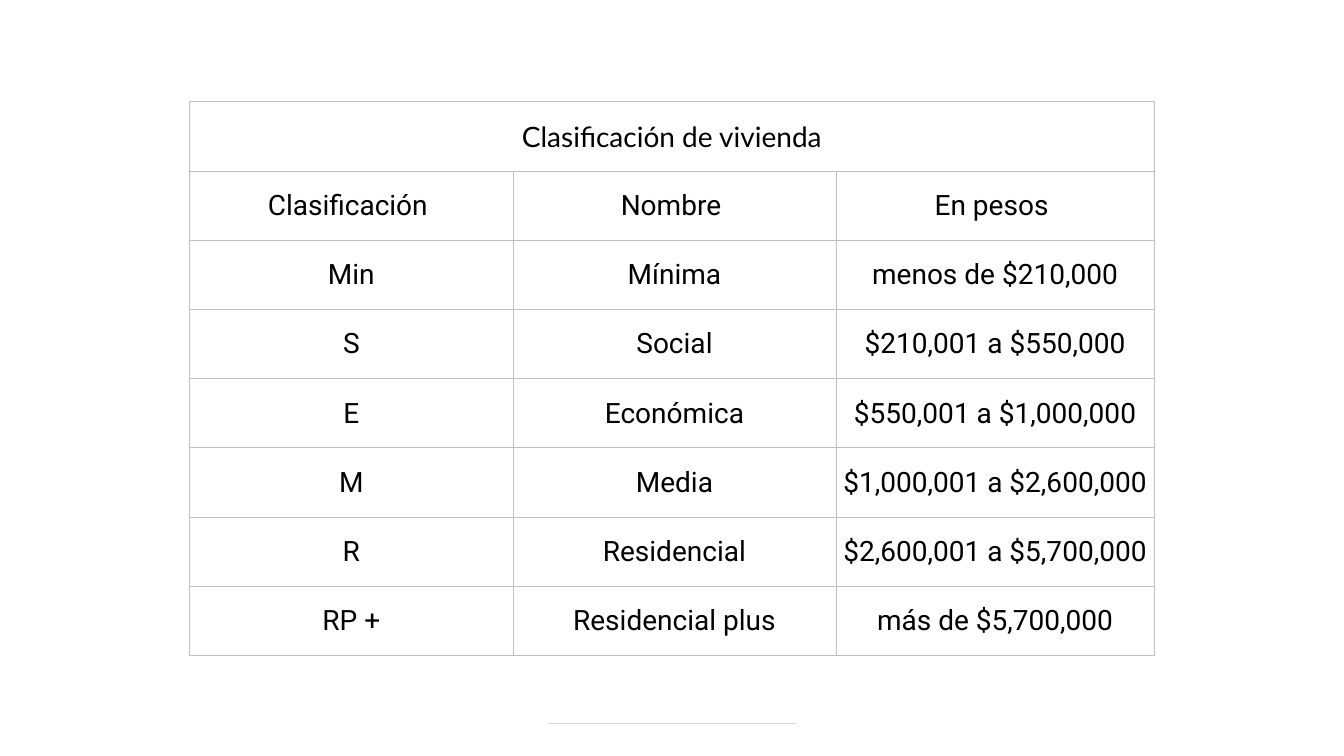
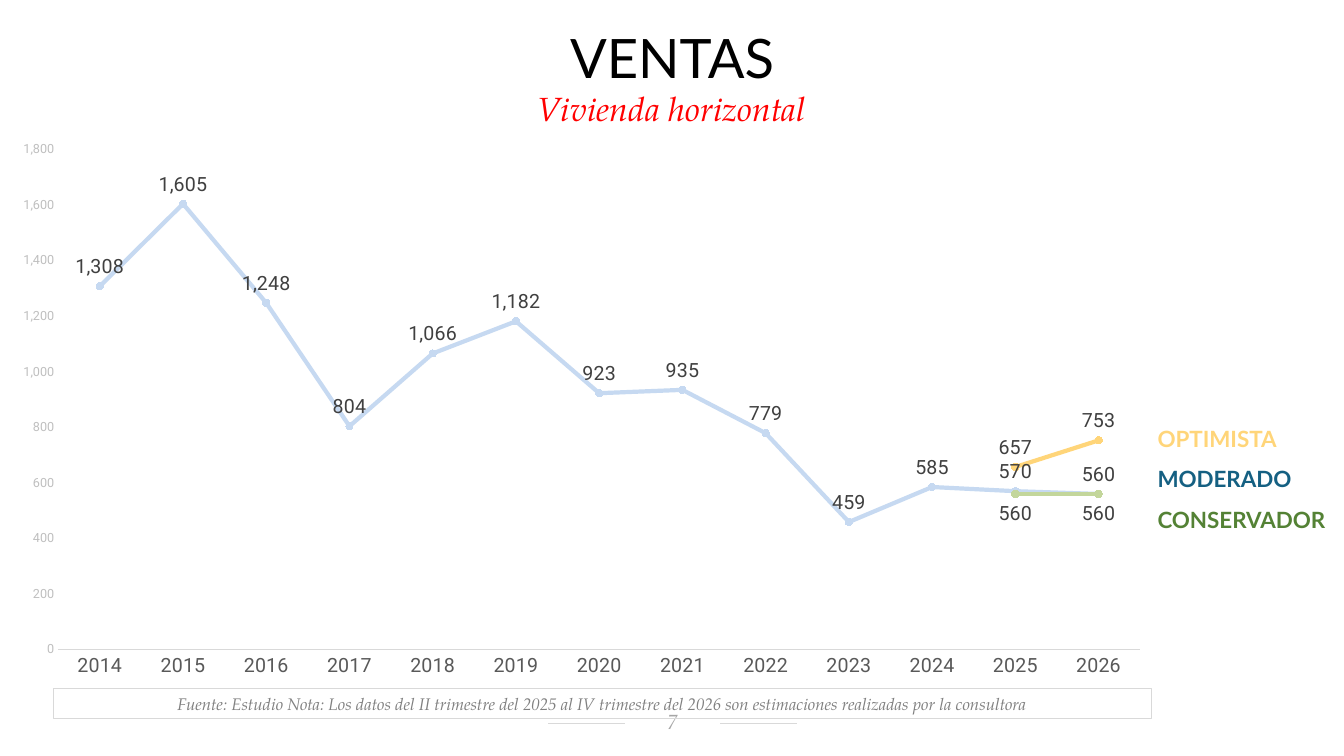
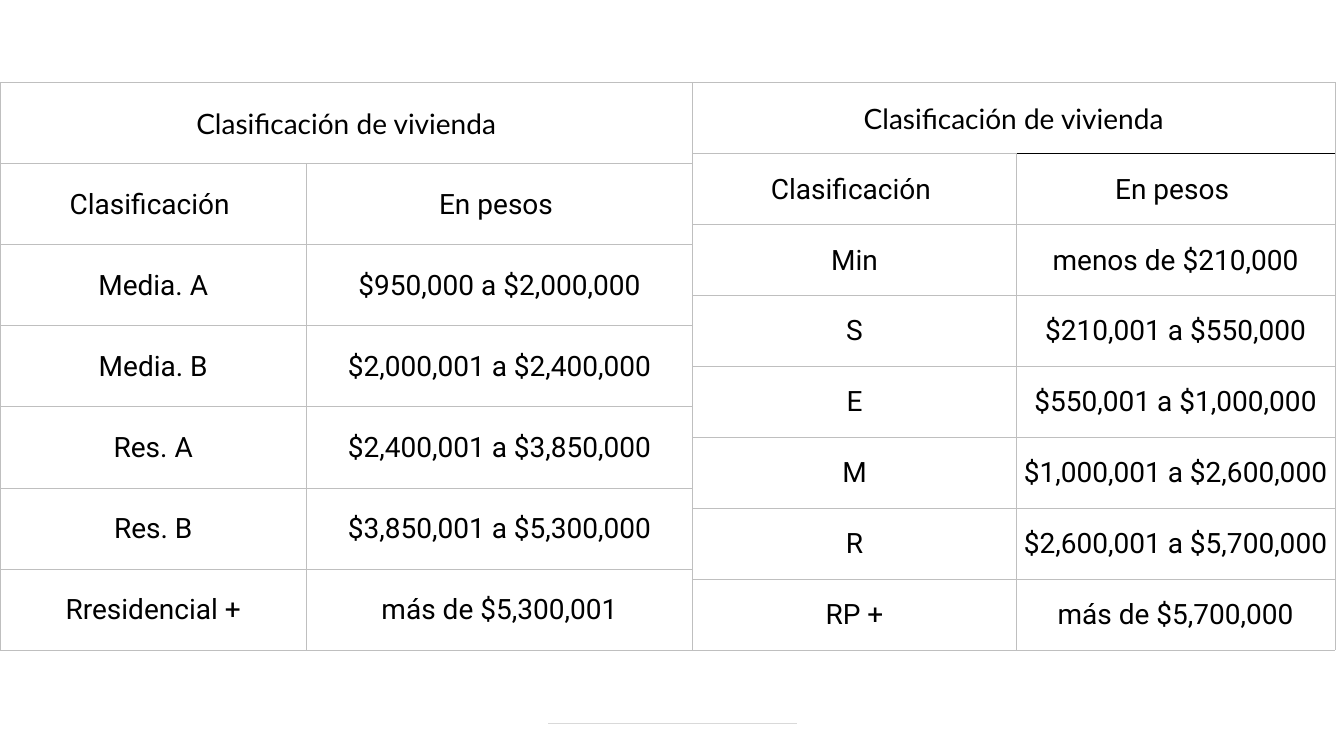
from lxml import etree
from pptx import Presentation
from pptx.chart.data import CategoryChartData
from pptx.dml.color import RGBColor
from pptx.enum.chart import (
    XL_CHART_TYPE as ChartType,
    XL_LABEL_POSITION as LabelPosition,
    XL_MARKER_STYLE as MarkerStyle,
    XL_TICK_MARK as TickMark,
)
from pptx.enum.shapes import MSO_CONNECTOR as Connector, MSO_SHAPE as Shape
from pptx.enum.text import MSO_ANCHOR as Anchor, PP_ALIGN as Align
from pptx.oxml.ns import qn
from pptx.util import Inches, Pt

COLORS = {
    "white": "FFFFFF",
    "black": "000000",
    "rule": "D9D9D9",
    "border": "BFBFBF",
    "page_number": "A6A6A6",
    "source": "808080",
    "subtitle": "FF0000",
    "category": "595959",
    "value": "404040",
    "history": "C6D9F1",
    "optimistic": "FFD579",
    "moderate": "156082",
    "conservative": "548235",
    "conservative_line": "C3D69B",
}
HEADING, BODY, ACCENT = "Lato", "Roboto", "TeX Gyre Pagella"
TABLE_TITLE = "Clasificación de vivienda"
HOUSING = [
    ("Clasificación ", "Nombre ", "En pesos "),
    ("Min", "Mínima", "menos de $210,000"),
    ("S", "Social", "$210,001 a $550,000"),
    ("E", "Económica", "$550,001 a $1,000,000"),
    ("M", "Media", "$1,000,001 a $2,600,000"),
    ("R", "Residencial", "$2,600,001 a $5,700,000"),
    ("RP +", "Residencial plus", "más de $5,700,000"),
]
VERTICAL = [
    ("Clasificación ", "En pesos "),
    ("Media. A", "$950,000 a $2,000,000"),
    ("Media. B", "$2,000,001 a $2,400,000"),
    ("Res. A", "$2,400,001 a $3,850,000"),
    ("Res. B", "$3,850,001 a $5,300,000"),
    ("Rresidencial +", "más de $5,300,001"),
]
YEARS = range(2014, 2027)
HISTORY = [1308, 1605, 1248, 804, 1066, 1182, 923, 935, 779, 459, 585, 570, 560]
SERIES = [
    ("Moderado", HISTORY, "history", LabelPosition.ABOVE),
    ("Optimista", [None] * 11 + [657, 753], "optimistic", LabelPosition.ABOVE),
    ("Conservador", [None] * 11 + [560, 560], "conservative_line", LabelPosition.BELOW),
]
SCENARIOS = [
    ("OPTIMISTA", "optimistic"),
    ("MODERADO", "moderate"),
    ("CONSERVADOR", "conservative"),
]


def rgb(color):
    return RGBColor.from_string(COLORS[color])


class Deck:
    def __init__(self):
        self.deck = Presentation()
        self.deck.slide_width = Inches(13.33)
        self.deck.slide_height = Inches(7.5)
        self.page = None

    def new_page(self):
        self.page = self.deck.slides.add_slide(self.deck.slide_layouts[6])
        rule = self.page.shapes.add_connector(
            Connector.STRAIGHT, Inches(5.44), Inches(7.18), Inches(7.9), Inches(7.18)
        )
        rule.line.color.rgb = rgb("rule")
        rule.line.width = Pt(1)
        etree.SubElement(rule.element.spPr, qn("a:effectLst"))

    def style_font(self, font, name, size, color, **flags):
        values = {"name": name, "size": Pt(size), **flags}
        for key, value in values.items():
            setattr(font, key, value)
        font.color.rgb = rgb(color)

    def fill_text(self, frame, text, align, spacing, font):
        frame.word_wrap = True
        para = frame.paragraphs[0]
        para.alignment = align
        para.line_spacing = spacing
        span = para.add_run()
        span.text = text
        self.style_font(span.font, **font)

    def text(self, place, text, font, align=Align.CENTER, anchor=Anchor.TOP,
             insets=(0.1, 0.05), spacing=1.0):
        box = self.page.shapes.add_textbox(*map(Inches, place))
        frame = box.text_frame
        frame.vertical_anchor = anchor
        frame.margin_left = frame.margin_right = Inches(insets[0])
        frame.margin_top = frame.margin_bottom = Inches(insets[1])
        self.fill_text(frame, text, align, spacing, font)

    def panel(self, place, text, font, fill=None, line=None, anchor=Anchor.TOP, top=0.05):
        box = self.page.shapes.add_shape(Shape.RECTANGLE, *map(Inches, place))
        box.shadow.inherit = False
        if fill:
            box.fill.solid()
            box.fill.fore_color.rgb = rgb(fill)
        else:
            box.fill.background()
        if line:
            box.line.color.rgb = rgb(line)
            box.line.width = Pt(0.75)
        else:
            box.line.fill.background()
        box.text_frame.vertical_anchor = anchor
        box.text_frame.margin_top = Inches(top)
        self.fill_text(box.text_frame, text, Align.CENTER, 1.0, font)

    def border(self, cell, side, color):
        properties = cell._tc.get_or_add_tcPr()
        edge = etree.Element(qn(f"a:ln{side}"), w=str(Pt(0.5)))
        fill = etree.SubElement(edge, qn("a:solidFill"))
        etree.SubElement(fill, qn("a:srgbClr"), val=COLORS[color])
        properties.insert("LRTB".index(side), edge)

    def table(self, left, top, widths, height, rows, dark_edge=None):
        count = len(rows) + 1
        frame = self.page.shapes.add_table(
            count, len(widths), Inches(left), Inches(top), Inches(sum(widths)), Inches(height)
        )
        grid = frame.table
        grid.first_row = grid.horz_banding = False
        for column, width in zip(grid.columns, widths):
            column.width = Inches(width)
        for row in grid.rows:
            row.height = Inches(height / count)
        grid.cell(0, 0).merge(grid.cell(0, len(widths) - 1))
        title = (TABLE_TITLE,) + ("",) * (len(widths) - 1)
        for r, texts in enumerate([title] + rows):
            for c, text in enumerate(texts):
                cell = grid.cell(r, c)
                cell.fill.background()
                cell.vertical_anchor = Anchor.MIDDLE
                cell.margin_left = cell.margin_right = cell.margin_top = Inches(0.01)
                cell.margin_bottom = 0
                for side in "LRTB":
                    dark = (r, c, side) in ((0, dark_edge, "B"), (1, dark_edge, "T"))
                    self.border(cell, side, "black" if dark else "border")
                if text:
                    font = {"name": BODY if r else HEADING, "size": 20, "color": "black"}
                    self.fill_text(cell.text_frame, text, Align.CENTER, 1.0, font)

    def line_chart(self, place, categories, series):
        data = CategoryChartData(number_format="#,##0")
        data.categories = [str(category) for category in categories]
        for name, values, _, _ in series:
            data.add_series(name, values)
        chart = self.page.shapes.add_chart(
            ChartType.LINE_MARKERS, *map(Inches, place), data
        ).chart
        chart.has_legend = chart.has_title = False
        self.style_font(chart.font, BODY, 10, "black")
        self.place_plot(chart, x=0.05, y=0.03, w=0.93, h=0.9)
        for axis, size, color in (
            (chart.category_axis, 14, "category"),
            (chart.value_axis, 9, "border"),
        ):
            axis.has_major_gridlines = False
            axis.major_tick_mark = axis.minor_tick_mark = TickMark.NONE
            self.style_font(axis.tick_labels.font, BODY, size, color)
        chart.category_axis.format.line.color.rgb = rgb("rule")
        chart.category_axis.format.line.width = Pt(0.75)
        values_axis = chart.value_axis
        values_axis.format.line.fill.background()
        values_axis.minimum_scale, values_axis.maximum_scale = 0, 1800
        values_axis.major_unit = 200
        values_axis.tick_labels.number_format = "#,##0"
        values_axis.tick_labels.number_format_is_linked = False
        plot = chart.plots[0]
        plot.vary_by_categories = False
        for line, (_, _, color, position) in zip(plot.series, series):
            line.smooth = False
            line.format.line.color.rgb = rgb(color)
            line.format.line.width = Pt(3)
            line.marker.style = MarkerStyle.CIRCLE
            line.marker.size = 5
            line.marker.format.fill.solid()
            line.marker.format.fill.fore_color.rgb = rgb(color)
            line.marker.format.line.color.rgb = rgb(color)
            labels = line.data_labels
            settings = {
                "show_value": True,
                "position": position,
                "number_format": "#,##0",
                "number_format_is_linked": False,
            }
            for key, value in settings.items():
                setattr(labels, key, value)
            self.style_font(labels.font, BODY, 14, "value")

    def place_plot(self, chart, **fractions):
        area = chart.element.find(".//" + qn("c:plotArea"))
        for old in area.findall(qn("c:layout")):
            area.remove(old)
        layout = etree.Element(qn("c:layout"))
        manual = etree.SubElement(layout, qn("c:manualLayout"))
        settings = {"layoutTarget": "inner", "xMode": "edge", "yMode": "edge", **fractions}
        for key, value in settings.items():
            etree.SubElement(manual, qn(f"c:{key}"), val=str(value))
        area.insert(0, layout)


def accent(size, color):
    return {"name": ACCENT, "size": size, "color": color, "italic": True}


def build_sales(deck):
    deck.new_page()
    deck.panel((6.2, 7.04, 0.94, 0.25), "7", accent(14.7, "page_number"),
               fill="white", anchor=Anchor.MIDDLE, top=0.02)
    deck.panel(
        (0.53, 6.83, 10.89, 0.3),
        "Fuente: Estudio Nota: Los datos del II trimestre del 2025 al IV trimestre "
        "del 2026 son estimaciones realizadas por la consultora",
        accent(12, "source"), line="rule",
    )
    deck.text((0, 0.82, 13.33, 0.5), "Vivienda horizontal", accent(24, "subtitle"))
    deck.text((0.49, 0.31, 12.35, 0.64), "VENTAS",
              {"name": HEADING, "size": 38.8, "color": "black"},
              insets=(0.12, 0.06), spacing=0.8)
    for index, (name, color) in enumerate(SCENARIOS):
        deck.text((11.34, 4.2 + 0.4 * index, 1.99, 0.35), name,
                  {"name": HEADING, "size": 16, "color": color, "bold": True},
                  align=Align.LEFT, anchor=Anchor.MIDDLE, insets=(0.14, 0.07), spacing=0.8)
    deck.line_chart((0, 1.32, 11.54, 5.51), YEARS, SERIES)


def main():
    deck = Deck()
    deck.new_page()
    deck.table(1.88, 1.01, (3.21, 3.2, 3.16), 5.49, HOUSING)
    build_sales(deck)
    deck.new_page()
    deck.table(0, 0.82, (3.04, 3.83), 5.63, VERTICAL)
    prices = [(code, price) for code, _, price in HOUSING]
    deck.table(6.87, 0.82, (3.21, 3.16), 5.63, prices, dark_edge=1)
    deck.deck.save("out.pptx")


if __name__ == "__main__":
    main()
